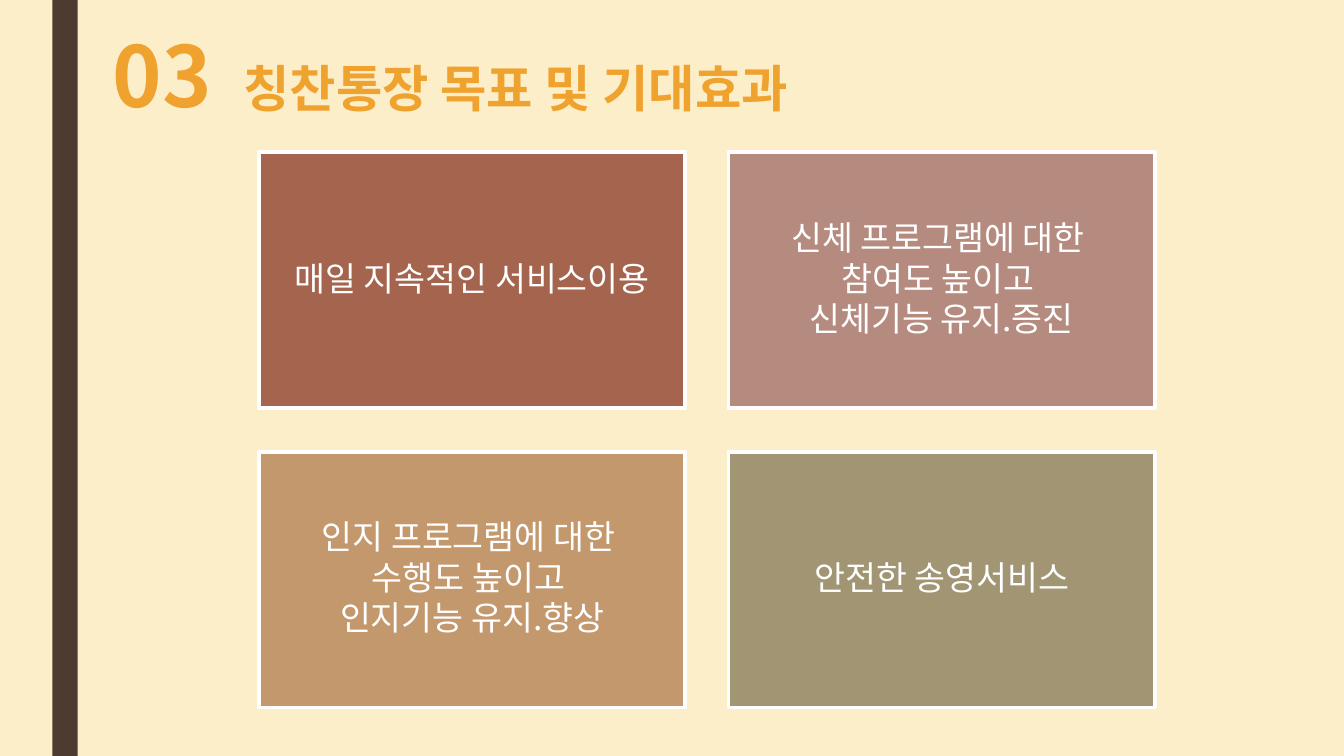
from lxml import etree
from pptx import Presentation
from pptx.dml.color import RGBColor
from pptx.enum.shapes import MSO_SHAPE as SHAPE
from pptx.enum.text import MSO_ANCHOR as ANCHOR, PP_ALIGN as ALIGN
from pptx.oxml.ns import qn
from pptx.util import Cm, Pt

CREAM = RGBColor(0xFB, 0xEE, 0xC9)
BROWN = RGBColor(0x4E, 0x3B, 0x30)
ORANGE = RGBColor(0xF0, 0xA2, 0x2E)
WHITE = RGBColor(0xFF, 0xFF, 0xFF)
RUST = RGBColor(0xA5, 0x64, 0x4E)
ROSE = RGBColor(0xB5, 0x8B, 0x80)
TAN = RGBColor(0xC3, 0x98, 0x6D)
OLIVE = RGBColor(0xA1, 0x95, 0x74)

GOALS = [
    (RUST, ["매일 지속적인 서비스이용"]),
    (ROSE, ["신체 프로그램에 대한 ", "참여도 높이고 ", "신체기능 유지.증진"]),
    (TAN, ["인지 프로그램에 대한 ", "수행도 높이고 ", "인지기능 유지.향상"]),
    (OLIVE, ["안전한 송영서비스"]),
]


class Deck:
    font = "Noto Sans CJK KR"

    def __init__(self):
        self.prs = Presentation()
        self.prs.slide_width, self.prs.slide_height = Cm(33.87), Cm(19.05)
        self.s = self.prs.slides.add_slide(self.prs.slide_layouts[6])

    def background(self, color):
        fill = self.s.background.fill
        fill.solid()
        fill.fore_color.rgb = color

    def style(self, font, color, bold=False):
        font.color.rgb = color
        font.bold = bold
        font.name = self.font
        # Hangul takes the East Asian typeface
        etree.SubElement(font._element, qn("a:ea"), typeface=self.font)

    def rect(self, x, y, w, h, color, border=None):
        sp = self.s.shapes.add_shape(SHAPE.RECTANGLE, Cm(x), Cm(y), Cm(w), Cm(h))
        sp.shadow.inherit = False
        sp.fill.solid()
        sp.fill.fore_color.rgb = color
        if border is None:
            sp.line.fill.background()
        else:
            sp.line.color.rgb = border
            sp.line.width = Pt(2.75)
        return sp

    def title(self, x, y, w, h, number, text):
        tf = self.s.shapes.add_textbox(Cm(x), Cm(y), Cm(w), Cm(h)).text_frame
        tf.word_wrap = True
        p = tf.paragraphs[0]
        # A tab stop sets the gap between number and heading
        tabs = etree.SubElement(p._p.get_or_add_pPr(), qn("a:tabLst"))
        etree.SubElement(tabs, qn("a:tab"), pos=str(Cm(3.3)), algn="l")
        for part, size in ((number, 60), ("\t" + text, 36)):
            r = p.add_run()
            r.text = part
            r.font.size = Pt(size)
        self.style(p.font, ORANGE, bold=True)

    def card(self, x, y, w, h, color, lines):
        tf = self.rect(x, y, w, h, color, WHITE).text_frame
        tf.word_wrap = True
        tf.vertical_anchor = ANCHOR.MIDDLE
        tf.margin_left = tf.margin_right = Cm(0.25)
        tf.margin_top = tf.margin_bottom = Cm(0.25)
        for i, line in enumerate(lines):
            p = tf.add_paragraph() if i else tf.paragraphs[0]
            p.text = line
            p.alignment = ALIGN.CENTER
            p.line_spacing = 0.9
            p.space_after = Pt(3)
            p.font.size = Pt(24)
            self.style(p.font, WHITE)


def main():
    deck = Deck()

    # Background and side bar
    deck.background(CREAM)
    deck.rect(1.32, 0, 0.64, 19.05, BROWN)

    # Heading
    deck.title(2.59, 0.48, 18.7, 2.82, "03", "칭찬통장 목표 및 기대효과")

    # Two by two grid of goals
    w, h, gap = 10.74, 6.45, 1.09
    for i, (color, lines) in enumerate(GOALS):
        row, col = divmod(i, 2)
        deck.card(6.53 + col * (w + gap), 3.84 + row * (h + gap), w, h, color, lines)

    deck.prs.save("out.pptx")


if __name__ == "__main__":
    main()
